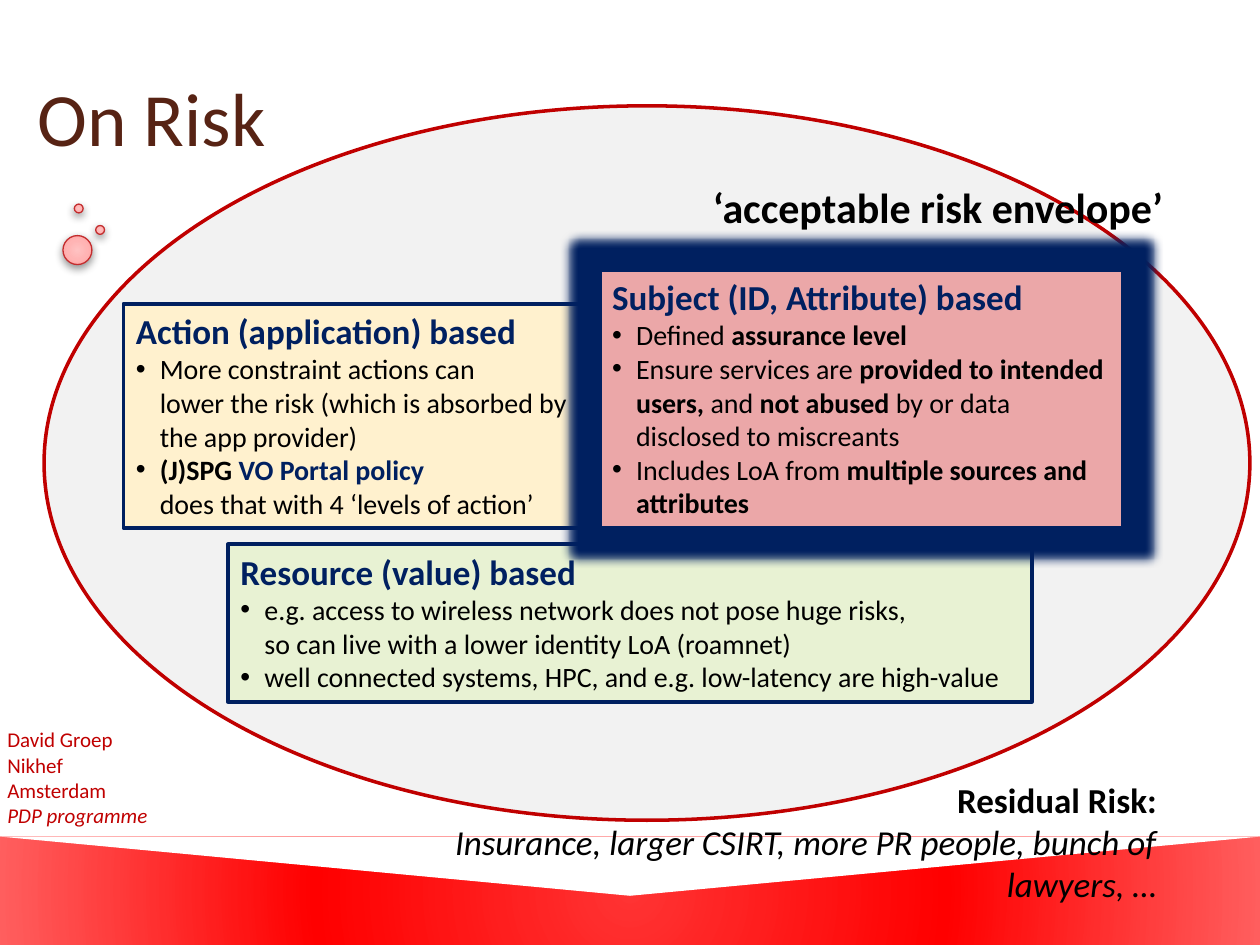
from dataclasses import dataclass
from typing import NamedTuple, Optional

from lxml.etree import SubElement
from pptx import Presentation
from pptx.dml.color import RGBColor
from pptx.enum.shapes import MSO_SHAPE as SHAPE
from pptx.enum.text import MSO_ANCHOR as ANCHOR, PP_ALIGN as ALIGN
from pptx.oxml.ns import qn
from pptx.util import Inches, Pt


@dataclass(frozen=True)
class Theme:
    font: str = "Calibri"
    ink: str = "000000"
    navy: str = "002060"
    crimson: str = "C00000"
    title: str = "572314"
    white: str = "FFFFFF"
    red: str = "FF0000"
    envelope: str = "F2F2F2"
    action: str = "FFF1CE"
    resource: str = "E8F2D3"
    subject: str = "EBA7A8"
    bubble_line: str = "C32D2E"
    title_size: float = 43
    label_size: float = 24
    heading_size: float = 20
    body_size: float = 16
    credit_size: float = 12


THEME = Theme()


class Run(NamedTuple):
    text: str
    bold: bool = False
    italic: bool = False
    color: str = THEME.ink


class Box(NamedTuple):
    left: float
    top: float
    width: float
    height: float


class Stop(NamedTuple):
    pos: int
    color: str
    alpha: int = 100


@dataclass(frozen=True)
class Card:
    box: Box
    fill: str
    heading: str
    bullets: list
    glow: bool = False


def B(text: str) -> Run:
    return Run(text, bold=True)


ACTION = Card(Box(0.98, 2.41, 3.68, 1.78), THEME.action, "Action (application) based", [
    [Run("More constraint actions can \nlower the risk (which is absorbed by the app provider)")],
    [B("(J)SPG "), Run("VO Portal policy \n", bold=True, color=THEME.navy),
     Run("does that with 4 ‘levels of action’")],
])
RESOURCE = Card(Box(1.81, 4.32, 6.38, 1.25), THEME.resource, "Resource (value) based", [
    [Run("e.g. access to wireless network does not pose huge risks, \n"
         "so can live with a lower identity LoA (roamnet)")],
    [Run("well connected systems, HPC, and e.g. low-latency are high-value")],
])
SUBJECT = Card(Box(4.76, 2.14, 4.15, 2.05), THEME.subject, "Subject (ID, Attribute) based", [
    [Run("Defined "), B("assurance level")],
    [Run("Ensure services are "), B("provided to intended users, "), Run("and "),
     B("not abused "), Run("by or data disclosed to miscreants")],
    [Run("Includes LoA from "), B("multiple sources and attributes")],
], glow=True)

BAND_STOPS = [Stop(0, THEME.red, 79), Stop(50, THEME.red), Stop(100, THEME.red, 62)]
BUBBLE_STOPS = [Stop(0, "FFC2C2"), Stop(50, "FFB4B4"), Stop(97, "FF9C9C"), Stop(100, "FF9595")]
BUBBLES = [Box(0.59, 1.62, 0.07, 0.07), Box(0.5, 1.87, 0.23, 0.23), Box(0.76, 1.79, 0.07, 0.07)]


def rgb(color: str) -> RGBColor:
    return RGBColor.from_string(color)


def add_color(parent, color: str, alpha: int = 100) -> None:
    clr = SubElement(parent, qn("a:srgbClr"), val=color)
    if alpha < 100:
        SubElement(clr, qn("a:alpha"), val=str(alpha * 1000))


def add_effect(sp, tag: str, color: str, alpha: int, **attrs: str) -> None:
    effects = sp._element.spPr.find(qn("a:effectLst"))
    add_color(SubElement(effects, qn(tag), **attrs), color, alpha)


def radial_fill(sp, stops: list) -> None:
    sp.fill.gradient()
    grad = sp._element.spPr.find(qn("a:gradFill"))
    for child in list(grad):
        grad.remove(child)
    gs_list = SubElement(grad, qn("a:gsLst"))
    for stop in stops:
        gs = SubElement(gs_list, qn("a:gs"), pos=str(stop.pos * 1000))
        add_color(gs, stop.color, stop.alpha)
    circle = SubElement(grad, qn("a:path"), path="circle")
    SubElement(circle, qn("a:fillToRect"), l="50000", t="50000", r="50000", b="50000")


def add_shape(slide, kind, box: Box, fill: Optional[str] = None, stops: Optional[list] = None,
              line: Optional[str] = None, weight: float = 1):
    sp = slide.shapes.add_shape(kind, *map(Inches, box))
    sp.shadow.inherit = False
    if stops:
        radial_fill(sp, stops)
    else:
        sp.fill.solid()
        sp.fill.fore_color.rgb = rgb(fill)
    if line:
        sp.line.color.rgb = rgb(line)
        sp.line.width = Pt(weight)
    else:
        sp.line.fill.background()
    return sp


def write_paragraph(p, runs: list, size: float, align=ALIGN.LEFT, bullet: bool = False) -> None:
    p.alignment = align
    if bullet:
        pPr = p._p.get_or_add_pPr()
        pPr.set("marL", str(Inches(0.19)))
        pPr.set("indent", str(Inches(-0.19)))
        SubElement(pPr, qn("a:buFont"), typeface="Arial")
        SubElement(pPr, qn("a:buChar"), char="•")
    for run in runs:
        for i, line in enumerate(run.text.split("\n")):
            if i:
                p.add_line_break()
            if line:
                r = p.add_run()
                r.text = line
                r.font.name, r.font.size = THEME.font, Pt(size)
                r.font.bold, r.font.italic = run.bold, run.italic
                r.font.color.rgb = rgb(run.color)


def add_text(slide, box: Box, paragraphs: list, size: float, align=ALIGN.LEFT,
             anchor=ANCHOR.TOP, wrap: bool = True) -> None:
    tf = slide.shapes.add_textbox(*map(Inches, box)).text_frame
    tf.word_wrap, tf.vertical_anchor = wrap, anchor
    for i, runs in enumerate(paragraphs):
        write_paragraph(tf.add_paragraph() if i else tf.paragraphs[0], runs, size, align)


def add_card(slide, card: Card) -> None:
    sp = add_shape(slide, SHAPE.RECTANGLE, card.box, card.fill, line=THEME.navy, weight=2.25)
    if card.glow:
        add_effect(sp, "a:glow", THEME.navy, 100, rad=str(Pt(11)))
    tf = sp.text_frame
    tf.word_wrap, tf.vertical_anchor = True, ANCHOR.TOP
    heading = Run(card.heading, bold=True, color=THEME.navy)
    write_paragraph(tf.paragraphs[0], [heading], THEME.heading_size)
    for runs in card.bullets:
        write_paragraph(tf.add_paragraph(), runs, THEME.body_size, bullet=True)


def main() -> None:
    prs = Presentation()
    prs.slide_width, prs.slide_height = Inches(10), Inches(7.5)
    slide = prs.slides.add_slide(prs.slide_layouts[6])

    # Credit and footer band
    credit = [Run("David Groep", color=THEME.crimson), Run("Nikhef\nAmsterdam", color=THEME.crimson),
              Run("PDP programme", italic=True, color=THEME.crimson)]
    add_text(slide, Box(-0.04, 5.72, 1.71, 1.15), [[run] for run in credit], THEME.credit_size)
    add_shape(slide, SHAPE.RECTANGLE, Box(0, 6.64, 10, 0.86), stops=BAND_STOPS)
    notch = add_shape(slide, SHAPE.ISOSCELES_TRIANGLE, Box(0, 6.64, 10, 0.47), THEME.white)
    notch._element.spPr.find(qn("a:xfrm")).set("flipV", "1")

    # Bubbles beside the title
    for box in BUBBLES:
        bubble = add_shape(slide, SHAPE.OVAL, box, stops=BUBBLE_STOPS,
                           line=THEME.bubble_line, weight=0.75)
        add_effect(bubble, "a:outerShdw", THEME.ink, 43, blurRad=str(Pt(5)),
                   dist=str(Pt(2)), dir="5400000", rotWithShape="0")

    # Risk envelope, its cards and labels
    add_shape(slide, SHAPE.OVAL, Box(0.35, 0.84, 9.57, 5.67), THEME.envelope,
              line=THEME.crimson, weight=2)
    add_card(slide, ACTION)
    add_card(slide, RESOURCE)
    add_text(slide, Box(5.56, 1.39, 4.37, 0.5), [[B("‘acceptable risk envelope’")]],
             THEME.label_size)
    add_text(slide, Box(0.2, 0.3, 8.6, 1.25), [[Run("On Risk", color=THEME.title)]],
             THEME.title_size, anchor=ANCHOR.MIDDLE)
    residual = [[B("Residual Risk:")],
                [Run("Insurance, larger CSIRT, more PR people, bunch of lawyers, …", italic=True)]]
    add_text(slide, Box(2.64, 6.13, 6.64, 0.77), residual, THEME.heading_size, ALIGN.RIGHT)
    add_card(slide, SUBJECT)

    prs.save("out.pptx")


if __name__ == "__main__":
    main()
